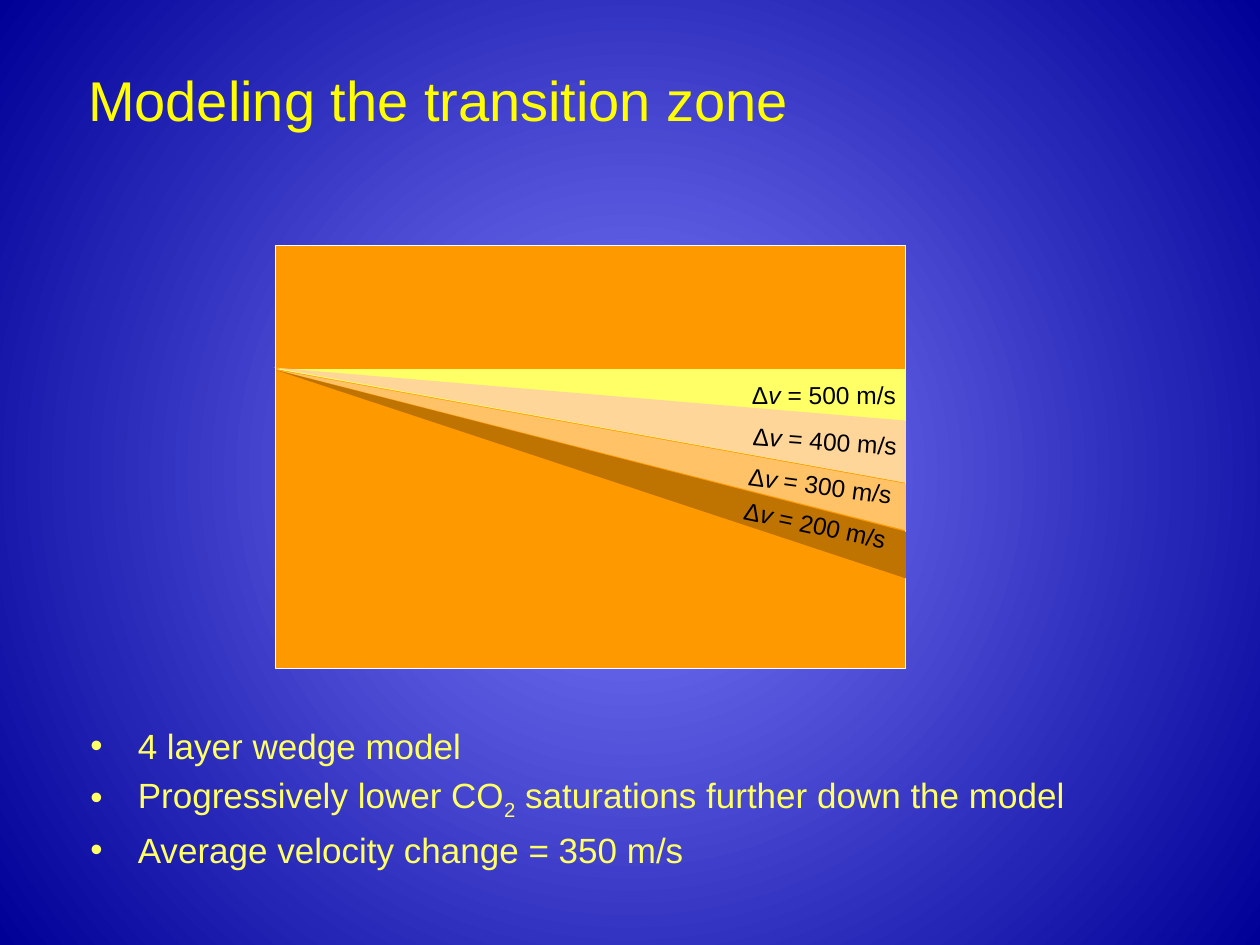
from dataclasses import dataclass

from lxml import etree
from pptx import Presentation
from pptx.dml.color import RGBColor
from pptx.enum import shapes, text
from pptx.oxml import ns
from pptx.util import Cm, Pt


@dataclass(frozen=True)
class Theme:
    face: str = "Arial"
    glow: str = "7F7FFF"
    navy: str = "000097"
    title: str = "FFFF00"
    list: str = "FFFF66"
    rock: str = "FF9900"
    edge: str = "FFFFFF"
    label: str = "000000"
    title_size: int = 32
    list_size: int = 20
    label_size: int = 14


THEME = Theme()

# Fill, apex (x, y), top and bottom depth at the right edge, in cm
LAYERS = [
    ("FFFF66", (0, 2.49), 2.49, 4.78),
    ("FFD699", (-0.05, 2.46), 3.53, 4.78),
    ("FFC266", (0.03, 2.51), 4.8, 5.74),
    ("BF7300", (0, 2.51), 5.77, 6.71),
]

# Velocity, left, top, width in cm, rotation in degrees
LABELS = [
    (500, 9.35, 2.59, 3.58, 0),
    (400, 9.37, 3.51, 3.43, 4.1),
    (300, 9.27, 4.42, 3.58, 7.6),
    (200, 9.17, 5.21, 3.43, 12),
]

# Each item is a list of (words, is subscript)
ITEMS = [
    [("4 layer wedge model", False)],
    [("Progressively lower CO", False), ("2", True),
     (" saturations further down the model", False)],
    [("Average velocity change = 350 m/s", False)],
]


def set_font(par, size, color):
    par.font.name = THEME.face
    par.font.size = Pt(size)
    par.font.color.rgb = RGBColor.from_string(color)


def paint(shape, color):
    shape.shadow.inherit = False
    shape.fill.solid()
    shape.fill.fore_color.rgb = RGBColor.from_string(color)


def place(shape, box):
    shape.left, shape.top, shape.width, shape.height = map(Cm, box)


def add_glow(slide):
    """Fill the background with a gradient that spreads from the centre."""
    fill = slide.background.fill
    fill.gradient()
    for stop, color in zip(fill.gradient_stops, (THEME.glow, THEME.navy)):
        stop.color.rgb = RGBColor.from_string(color)
    grad = slide.background._cSld.find(".//" + ns.qn("a:gradFill"))
    grad.remove(grad.find(ns.qn("a:lin")))
    round_path = etree.SubElement(grad, ns.qn("a:path"), path="circle")
    etree.SubElement(round_path, ns.qn("a:fillToRect"),
                     dict.fromkeys("ltrb", "50000"))


def add_title(slide, box, words):
    title = slide.shapes.title
    place(title, box)
    frame = title.text_frame
    frame.text = words
    frame.auto_size = text.MSO_AUTO_SIZE.NONE
    frame.vertical_anchor = text.MSO_ANCHOR.MIDDLE
    par = frame.paragraphs[0]
    par.alignment = text.PP_ALIGN.LEFT
    set_font(par, THEME.title_size, THEME.title)


def add_list(slide, box, items):
    body = slide.placeholders[1]
    place(body, box)
    frame = body.text_frame
    frame.auto_size = text.MSO_AUTO_SIZE.NONE
    for i, item in enumerate(items):
        par = frame.add_paragraph() if i else frame.paragraphs[0]
        if i == 0:
            par.space_before = Pt(0)
        set_font(par, THEME.list_size, THEME.list)
        for words, is_sub in item:
            run = par.add_run()
            run.text = words
            if is_sub:
                run._r.get_or_add_rPr().set("baseline", "-25000")


def add_label(slide, box, speed, turn):
    label = slide.shapes.add_textbox(*map(Cm, box))
    label.rotation = turn
    frame = label.text_frame
    frame.word_wrap = False
    par = frame.paragraphs[0]
    set_font(par, THEME.label_size, THEME.label)
    for words in ("Δ", "v ", f"= {speed} m/s"):
        run = par.add_run()
        run.text = words
        run.font.italic = words == "v "


def add_model(slide, box):
    """Draw the rock panel, its wedge layers and their labels."""
    left, top, width, _ = box
    panel = slide.shapes.add_shape(shapes.MSO_SHAPE.RECTANGLE, *map(Cm, box))
    paint(panel, THEME.rock)
    panel.line.color.rgb = RGBColor.from_string(THEME.edge)
    panel.line.width = Pt(0.75)

    right = Cm(left + width)
    for color, (x, y), high, low in LAYERS:
        pen = slide.shapes.build_freeform(Cm(left + x), Cm(top + y))
        pen.add_line_segments([(right, Cm(top + high)), (right, Cm(top + low))])
        wedge = pen.convert_to_shape()
        paint(wedge, color)
        wedge.line.fill.background()

    for speed, x, y, wide, turn in LABELS:
        add_label(slide, (left + x, top + y, wide, 0.86), speed, turn)


def main():
    deck = Presentation()
    deck.slide_width, deck.slide_height = Cm(25.4), Cm(19.05)
    slide = deck.slides.add_slide(deck.slide_layouts[1])
    add_glow(slide)
    add_title(slide, (1.52, 0.41, 21.59, 3.18), "Modeling the transition zone")
    add_model(slide, (5.56, 4.95, 12.7, 8.53))
    add_list(slide, (1.57, 14.48, 21.59, 3.71), ITEMS)
    deck.save("out.pptx")


if __name__ == "__main__":
    main()
